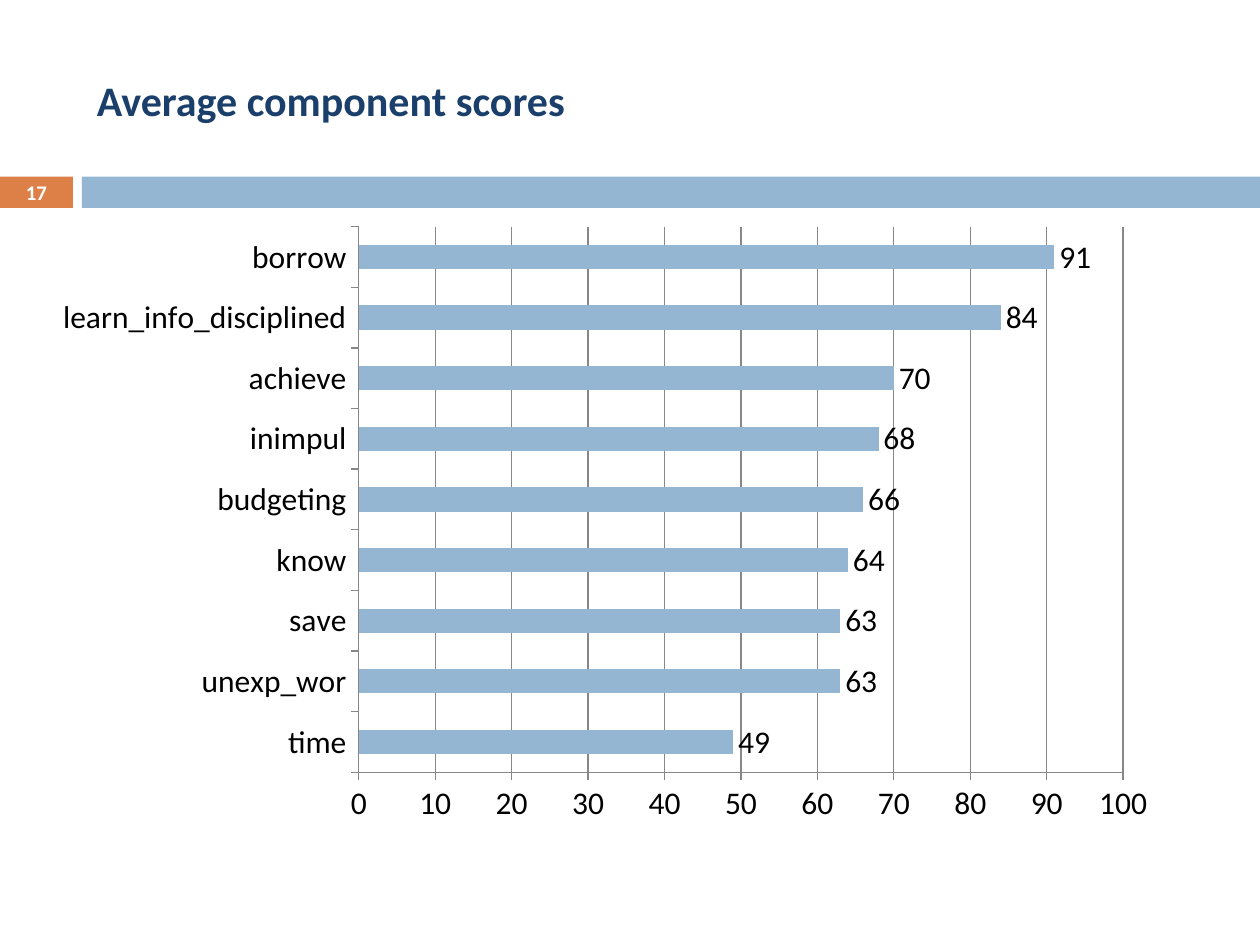
import pptx
import pptx.chart.data
import pptx.dml.color
import pptx.enum.chart
import pptx.enum.shapes
import pptx.enum.text
import pptx.oxml
import pptx.oxml.ns
import pptx.util
from dataclasses import dataclass

Cm, Pt = pptx.util.Cm, pptx.util.Pt
Align = pptx.enum.text.PP_ALIGN
Mark = pptx.enum.chart.XL_TICK_MARK


@dataclass(frozen=True)
class Theme:
    face: str = "Calibri"
    navy: str = "1B3F6B"
    blue: str = "94B6D2"
    rust: str = "DD8047"
    white: str = "FFFFFF"
    black: str = "000000"
    grey: str = "878787"
    head: float = 24
    label: float = 18
    page: float = 11.9


LOOK = Theme()

SCORES = {
    "time": 49,
    "unexp_wor": 63,
    "save": 63,
    "know": 64,
    "budgeting": 66,
    "inimpul": 68,
    "achieve": 70,
    "learn_info_disciplined": 84,
    "borrow": 91,
}


def rgb(code):
    return pptx.dml.color.RGBColor.from_string(code)


def put(item, **values):
    for name, value in values.items():
        setattr(item, name, value)


def style(font, size, color, bold=False):
    put(font, name=LOOK.face, size=Pt(size), bold=bold)
    font.color.rgb = rgb(color)


def write(shape, text, size, color, align):
    frame = shape.text_frame
    put(frame, text=text, word_wrap=True,
        vertical_anchor=pptx.enum.text.MSO_ANCHOR.MIDDLE)
    para = frame.paragraphs[0]
    para.alignment = align
    style(para.runs[0].font, size, color, bold=True)


def add_bar(slide, left, width, color):
    bar = slide.shapes.add_shape(
        pptx.enum.shapes.MSO_SHAPE.RECTANGLE,
        Cm(left), Cm(3.56), Cm(width), Cm(0.63))
    bar.shadow.inherit = False
    bar.fill.solid()
    bar.fill.fore_color.rgb = rgb(color)
    bar.line.fill.background()


def add_title(slide, text):
    title = slide.shapes.title
    put(title, left=Cm(1.7), top=Cm(0.64), width=Cm(22.66), height=Cm(2.74))
    write(title, text, LOOK.head, LOOK.navy, Align.LEFT)


def add_page(slide, text):
    box = slide.shapes.add_textbox(Cm(0), Cm(3.53), Cm(1.47), Cm(0.69))
    put(box.text_frame, margin_left=0, margin_right=0,
        margin_top=0, margin_bottom=0)
    write(box, text, LOOK.page, LOOK.white, Align.CENTER)


def set_plot(chart, **box):
    """Fix the inner plot area, in fractions of the chart."""
    area = chart._chartSpace.chart.plotArea
    for old in area.findall(pptx.oxml.ns.qn("c:layout")):
        area.remove(old)
    parts = "".join(f'<c:{key} val="{val}"/>' for key, val in box.items())
    area.insert(0, pptx.oxml.parse_xml(
        f'<c:layout {pptx.oxml.ns.nsdecls("c")}><c:manualLayout>'
        '<c:layoutTarget val="inner"/>'
        '<c:xMode val="edge"/><c:yMode val="edge"/>'
        f'{parts}</c:manualLayout></c:layout>'))


def add_chart(slide, scores):
    data = pptx.chart.data.CategoryChartData(number_format="0")
    data.categories = list(scores)
    data.add_series("Series 1", list(scores.values()))
    chart = slide.shapes.add_chart(
        pptx.enum.chart.XL_CHART_TYPE.BAR_CLUSTERED,
        Cm(0.89), Cm(4.32), Cm(22.66), Cm(12.5), data).chart
    put(chart, has_legend=False, has_title=False)
    style(chart.font, LOOK.label, LOOK.black)
    set_plot(chart, x=0.28, y=0.02, w=0.68, h=0.88)

    # Axes
    cat, val = chart.category_axis, chart.value_axis
    put(cat, has_major_gridlines=False)
    put(val, has_major_gridlines=True, minimum_scale=0, maximum_scale=100,
        major_unit=10)
    put(val.tick_labels, number_format="0", number_format_is_linked=False)
    for axis in (cat, val):
        put(axis, major_tick_mark=Mark.OUTSIDE, minor_tick_mark=Mark.NONE)
    for part in (cat, val, val.major_gridlines):
        part.format.line.color.rgb = rgb(LOOK.grey)
        part.format.line.width = Pt(0.75)

    # Bars and their labels
    plot = chart.plots[0]
    put(plot, gap_width=150, vary_by_categories=False, has_data_labels=True)
    put(plot.data_labels, show_value=True, number_format="0",
        number_format_is_linked=False,
        position=pptx.enum.chart.XL_LABEL_POSITION.OUTSIDE_END)
    fill = plot.series[0].format.fill
    fill.solid()
    fill.fore_color.rgb = rgb(LOOK.blue)


def main():
    deck = pptx.Presentation()
    put(deck, slide_width=Cm(25.4), slide_height=Cm(19.05))
    slide = deck.slides.add_slide(deck.slide_layouts[5])

    # Header band
    add_bar(slide, 0, 1.47, LOOK.rust)
    add_bar(slide, 1.65, 23.75, LOOK.blue)
    add_title(slide, "Average component scores")
    add_page(slide, "17")

    # Scores
    add_chart(slide, SCORES)
    deck.save("out.pptx")


if __name__ == "__main__":
    main()
